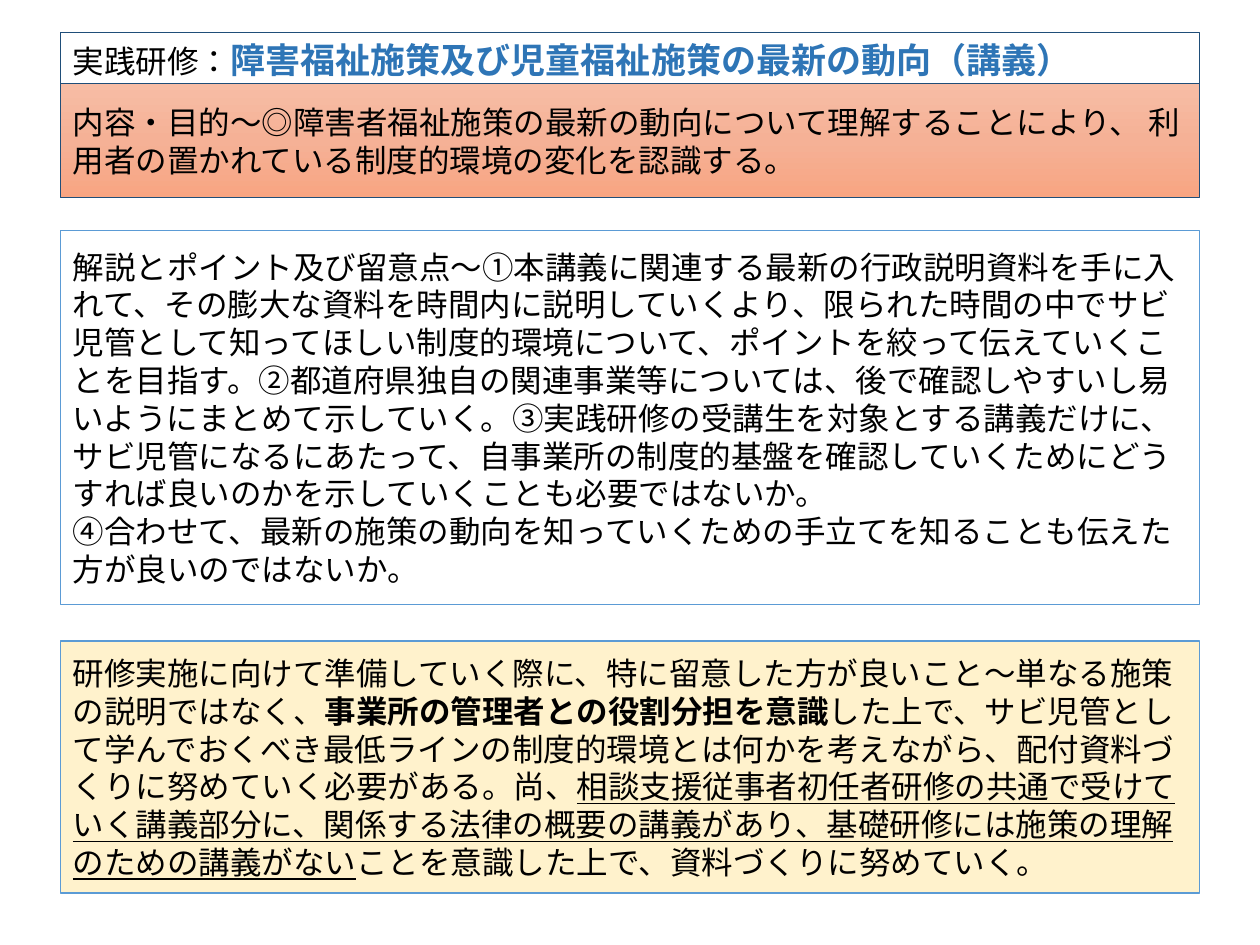
import copy
from dataclasses import dataclass

import pptx
import pptx.dml.color
import pptx.enum.lang
import pptx.enum.shapes
import pptx.enum.text
import pptx.oxml
import pptx.oxml.ns
import pptx.util

Cm = pptx.util.Cm
Anchor = pptx.enum.text.MSO_ANCHOR

FONT = "Noto Sans CJK JP"
LEFT, WIDTH = 1.22, 22.96
COLORS = {
    "text": "000000", "title": "2E75B6", "navy": "1F4E79", "blue": "5B9BD5",
    "white": "FFFFFF", "cream": "FFF2CC",
    "peach": "F7BDA5", "coral": "F5B196", "salmon": "F8A582",
}


@dataclass
class Span:
    text: str
    size: int = 18
    color: str = "text"
    bold: bool = False
    under: bool = False


@dataclass
class Panel:
    top: float
    height: float
    fills: list[str]  # none, one solid colour, or three gradient stops
    line: str
    weight: float
    paras: list[list[Span]]
    anchor: Anchor = Anchor.MIDDLE


def rgb(name: str) -> pptx.dml.color.RGBColor:
    return pptx.dml.color.RGBColor.from_string(COLORS[name])


def paint(shape, fills: list[str]) -> None:
    """Fill the shape with nothing, one colour or a downward gradient."""
    fill = shape.fill
    if not fills:
        fill.background()
    elif len(fills) == 1:
        fill.solid()
        fill.fore_color.rgb = rgb(fills[0])
    else:
        fill.gradient()
        fill.gradient_angle = 270
        first = shape._element.spPr.find(".//" + pptx.oxml.ns.qn("a:gs"))
        first.addnext(copy.deepcopy(first))
        for stop, name, place in zip(fill.gradient_stops, fills, (0, 0.5, 1)):
            stop.color.rgb = rgb(name)
            stop.position = place


def write(para, spans: list[Span]) -> None:
    para.alignment = pptx.enum.text.PP_ALIGN.LEFT
    for span in spans:
        run = para.add_run()
        run.text = span.text
        font = run.font
        font.size = pptx.util.Pt(span.size)
        font.color.rgb = rgb(span.color)
        font.bold, font.underline = span.bold, span.under
        font.language_id = pptx.enum.lang.MSO_LANGUAGE_ID.JAPANESE
        font.name = FONT
        # East Asian typeface follows the Latin one
        props = run._r.get_or_add_rPr()
        east = pptx.oxml.parse_xml(
            f'<a:ea {pptx.oxml.ns.nsdecls("a")} typeface="{FONT}"/>')
        props.find(pptx.oxml.ns.qn("a:latin")).addnext(east)


def draw(slide, panel: Panel) -> None:
    shape = slide.shapes.add_shape(
        pptx.enum.shapes.MSO_SHAPE.RECTANGLE,
        Cm(LEFT), Cm(panel.top), Cm(WIDTH), Cm(panel.height))
    shape.shadow.inherit = False
    paint(shape, panel.fills)
    shape.line.color.rgb = rgb(panel.line)
    shape.line.width = pptx.util.Pt(panel.weight)
    frame = shape.text_frame
    frame.word_wrap = True
    frame.vertical_anchor = panel.anchor
    for i, spans in enumerate(panel.paras):
        write(frame.add_paragraph() if i else frame.paragraphs[0], spans)


PANELS = [
    # Title
    Panel(0.66, 1.12, [], "navy", 0.75, [[
        Span("実践研修："),
        Span("障害福祉施策及び児童福祉施策の最新の動向（講義）", 20, "title", bold=True),
    ]], Anchor.TOP),
    # Content and aim
    Panel(1.68, 2.31, ["peach", "coral", "salmon"], "navy", 0.5, [[
        Span("内容・目的～◎障害者福祉施策の最新の動向について理解することにより、 "
             "利用者の置かれている制度的環境の変化を認識する。"),
    ]]),
    # Explanation and key points
    Panel(4.65, 7.54, ["white"], "blue", 1, [
        [Span("解説とポイント及び留意点～①本講義に関連する最新の行政説明資料を手に入れて、"
              "その膨大な資料を時間内に説明していくより、限られた時間の中でサビ児管として"
              "知ってほしい制度的環境について、ポイントを絞って伝えていくことを目指す。"
              "②都道府県独自の関連事業等については、後で確認しやすいし易いようにまとめて"
              "示していく。③実践研修の受講生を対象とする講義だけに、サビ児管になるにあたって、"
              "自事業所の制度的基盤を確認していくためにどうすれば良いのかを示していくことも"
              "必要ではないか。")],
        [Span("④合わせて、最新の施策の動向を知っていくための手立てを知ることも"
              "伝えた方が良いのではないか。")],
    ]),
    # Points for preparing the training
    Panel(12.93, 5.08, ["cream"], "blue", 1, [[
        Span("研修実施に向けて準備していく際に、特に留意した方が良いこと～"
             "単なる施策の説明ではなく、"),
        Span("事業所の管理者との役割分担を意識", bold=True),
        Span("した上で、サビ児管として学んでおくべき最低ラインの制度的環境とは何かを"
             "考えながら、配付資料づくりに努めていく必要がある。尚、"),
        Span("相談支援従事者初任者研修の共通で受けていく講義部分に、関係する法律の概要の"
             "講義があり、基礎研修には施策の理解のための講義がない", under=True),
        Span("ことを意識した上で、資料づくりに努めていく。"),
    ]]),
]


def main() -> None:
    deck = pptx.Presentation()
    deck.slide_width, deck.slide_height = Cm(25.4), Cm(19.05)
    slide = deck.slides.add_slide(deck.slide_layouts[6])
    for panel in PANELS:
        draw(slide, panel)
    deck.save("out.pptx")


if __name__ == "__main__":
    main()
